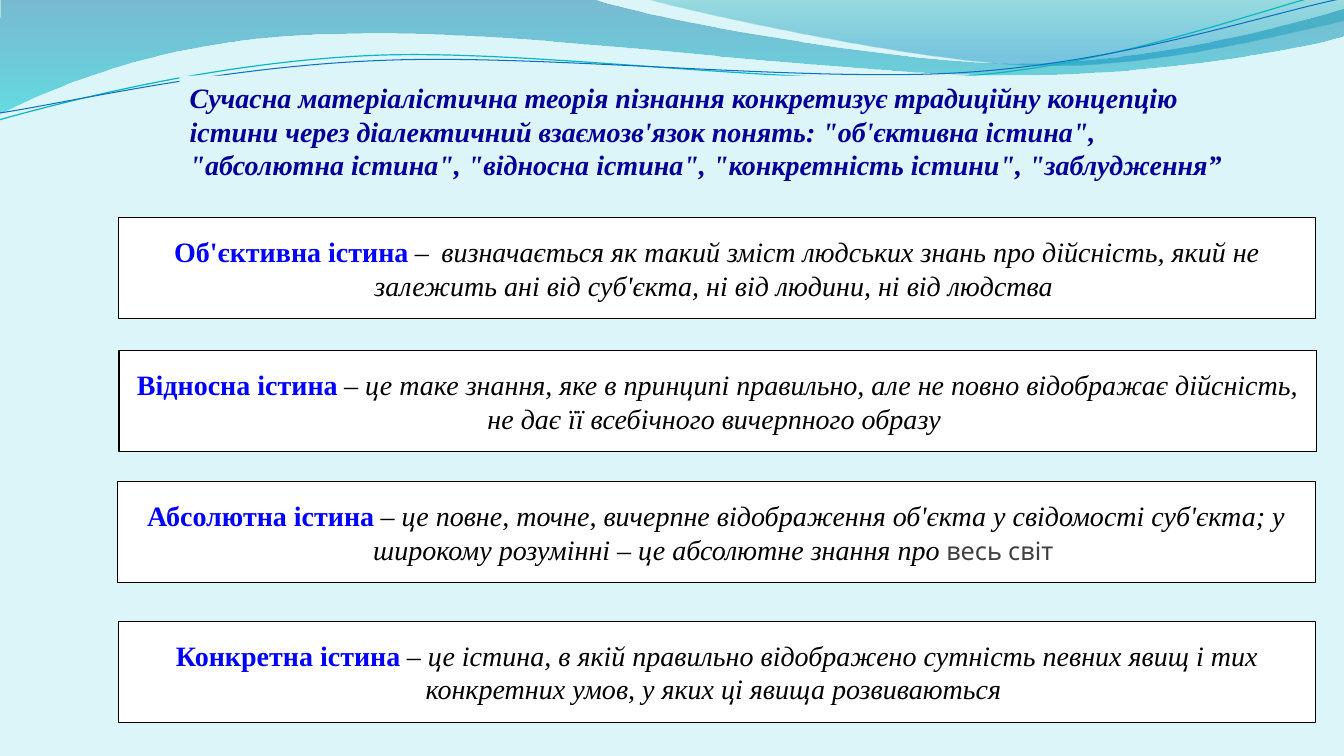
import pptx
import pptx.dml.color
import pptx.enum.shapes
import pptx.enum.text
import pptx.oxml
import pptx.oxml.ns
import pptx.util

Pt = pptx.util.Pt
qn = pptx.oxml.ns.qn
NS = pptx.oxml.ns.nsdecls("a")
SERIF = "Times New Roman"
HUES = {
    "back": "DBF5F9", "box": "FFFFFF", "edge": "000000", "text": "000000",
    "term": "0000FF", "head": "000099", "gray": "404040",
    "teal": "0AB8BF", "blue": "0F6FC6",
    "deep": "0074A1", "aqua": "00C6CF", "sea": "00A1A9", "sky": "008BBF",
}
# font, size, colour, bold, italic
STYLES = {
    "term": (SERIF, 20, "term", True, False),
    "body": (SERIF, 20, "text", False, True),
    "plain": ("League Spartan", 18, "gray", False, False),
    "slant": ("League Spartan", 18, "gray", False, True),
}
HEAD = (
    "Сучасна матеріалістична теорія пізнання конкретизує традиційну концепцію "
    "істини через діалектичний взаємозв'язок понять: \"об'єктивна істина\", "
    "\"абсолютна істина\", \"відносна істина\", \"конкретність істини\", \"заблудження”"
)
# left, top, term, then the styled runs that explain it
TRUTHS = [
    (84.5, 155.5, "Об'єктивна істина", [
        ("slant", " "), ("body", "–"), ("slant", "  "),
        ("body", "визначається як такий зміст людських знань про дійсність, який не "
                 "залежить ані від суб'єкта, ні від людини, ні від людства"),
        ("plain", " ")]),
    (85, 250.5, "Відносна істина", [
        ("plain", " "),
        ("body", "– це таке знання, яке в принципі правильно, але не повно відображає "
                 "дійсність, не дає її всебічного вичерпного образу ")]),
    (84, 344.3, "Абсолютна істина", [
        ("plain", " "),
        ("body", "– це повне, точне, вичерпне відображення об'єкта у свідомості "
                 "суб'єкта; у широкому розумінні – це абсолютне знання про"),
        ("plain", " весь світ ")]),
    (84.5, 443.8, "Конкретна істина", [
        ("plain", " "),
        ("body", "– це істина, в якій правильно відображено сутність певних явищ і тих "
                 "конкретних умов, у яких ці явища розвиваються ")]),
]
# Each outline holds points; a step of 2 numbers is a line, of 6 a curve.
WAVES = [
    ([(0, -0.7), (422.6, -0.7), (456.5, 12.2, 637.2, 45.4, 727.9, 45.4),
      (819.4, 45.4, 920.2, 18.7, 960, 6.5), (961, 26),
      (944, 31.7, 835.2, 54.7, 715.7, 54), (596.9, 54, 366.5, 20.2, 247, 24.5),
      (123.8, 25.2, 43.9, 59.8, -0.7, 81.4), (0, -0.7)],
     [(0, "deep", 45), (1, "aqua", 55)]),
    ([(460, -0.7), (488.9, 7.9, 654.5, 44.6, 738, 46.8),
      (821.5, 49.7, 923, 23, 960, 15.1), (960, 0), (460, -0.7)],
     [(0, "sea", 30), (0.8, "sky", 45)]),
]
TILT = 357.3
CURVES = [
    ([(-2.3, 63), (45.1, 52.3, 152.1, 29.2, 266, 29.6),
      (379.9, 29.9, 567.7, 66.9, 683.1, 64.4), (798.6, 61.9, 902.7, 25.7, 960.1, 15.4)],
     "teal", 0.85),
    ([(-1.3, 58), (44.4, 53.6, 157.1, 32.3, 272.4, 33.4),
      (386.9, 33.8, 572.3, 63.4, 687, 61.6), (802.4, 59.8, 904.7, 30.1, 962, 21.2)],
     "blue", 0.75),
]


def color(name):
    return pptx.dml.color.RGBColor.from_string(HUES[name])


def add_path(slide, steps, close):
    """Lay all points as lines, then join each three of a curve into a Bezier."""
    start, *rest = steps
    pen = slide.shapes.build_freeform(Pt(start[0]), Pt(start[1]))
    points = [(Pt(step[i]), Pt(step[i + 1])) for step in rest for i in range(0, len(step), 2)]
    pen.add_line_segments(points, close=close)
    shape = pen.convert_to_shape()
    shape.shadow.inherit = False
    lines = iter(list(shape._element.iter(qn("a:lnTo"))))
    for step in rest:
        group = [next(lines) for _ in range(len(step) // 2)]
        if len(group) == 3:
            bend = pptx.oxml.parse_xml(f"<a:cubicBezTo {NS}/>")
            group[0].addprevious(bend)
            for line in group:
                bend.append(line[0])
                line.getparent().remove(line)
    return shape


def add_wave(slide, steps, stops):
    """Draw a closed outline with a see-through gradient from top to bottom."""
    shape = add_path(slide, steps, True)
    shape.line.fill.background()
    shape.fill.gradient()
    shape.fill.gradient_angle = 270
    for stop, (place, hue, _) in zip(shape.fill.gradient_stops, stops):
        stop.position = place
        stop.color.rgb = color(hue)
    tints = list(shape._element.spPr.iter(qn("a:srgbClr")))
    for tint, (_, _, alpha) in zip(tints, stops):
        tint.append(pptx.oxml.parse_xml(f'<a:alpha {NS} val="{alpha * 1000}"/>'))


def add_curve(slide, steps, hue, width):
    shape = add_path(slide, steps, False)
    shape.rotation = TILT
    shape.fill.background()
    shape.line.color.rgb = color(hue)
    shape.line.width = Pt(width)


def set_font(font, face, size, hue, bold, italic):
    font.name, font.size = face, Pt(size)
    font.bold, font.italic = bold, italic
    font.color.rgb = color(hue)


def add_truth(slide, left, top, term, runs):
    box = slide.shapes.add_shape(
        pptx.enum.shapes.MSO_SHAPE.RECTANGLE, Pt(left), Pt(top), Pt(855.4), Pt(72))
    box.shadow.inherit = False
    box.fill.solid()
    box.fill.fore_color.rgb = color("box")
    box.line.color.rgb = color("edge")
    box.line.width = Pt(0.75)
    frame = box.text_frame
    frame.word_wrap = True
    frame.vertical_anchor = pptx.enum.text.MSO_ANCHOR.MIDDLE
    line = frame.paragraphs[0]
    line.alignment = pptx.enum.text.PP_ALIGN.CENTER
    for style, text in [("term", term), *runs]:
        run = line.add_run()
        run.text = text
        set_font(run.font, *STYLES[style])


def set_title(slide):
    title = slide.shapes.title
    title.left, title.top, title.width, title.height = Pt(128.2), Pt(54), Pt(774.7), Pt(79.2)
    title.fill.solid()
    title.fill.fore_color.rgb = color("back")
    frame = title.text_frame
    frame.text = HEAD
    frame.word_wrap = True
    frame.auto_size = pptx.enum.text.MSO_AUTO_SIZE.SHAPE_TO_FIT_TEXT
    frame.vertical_anchor = pptx.enum.text.MSO_ANCHOR.TOP
    line = frame.paragraphs[0]
    line.alignment = pptx.enum.text.PP_ALIGN.LEFT
    set_font(line.font, SERIF, 20, "head", True, True)
    # The title covers the curves, so it goes to the front.
    slide.shapes._spTree.append(title._element)


def main():
    deck = pptx.Presentation()
    deck.slide_width, deck.slide_height = Pt(960), Pt(540)
    slide = deck.slides.add_slide(deck.slide_layouts[5])
    slide.background.fill.solid()
    slide.background.fill.fore_color.rgb = color("back")
    for wave in WAVES:
        add_wave(slide, *wave)
    for curve in CURVES:
        add_curve(slide, *curve)
    for truth in TRUTHS:
        add_truth(slide, *truth)
    set_title(slide)
    deck.save("out.pptx")


if __name__ == "__main__":
    main()
